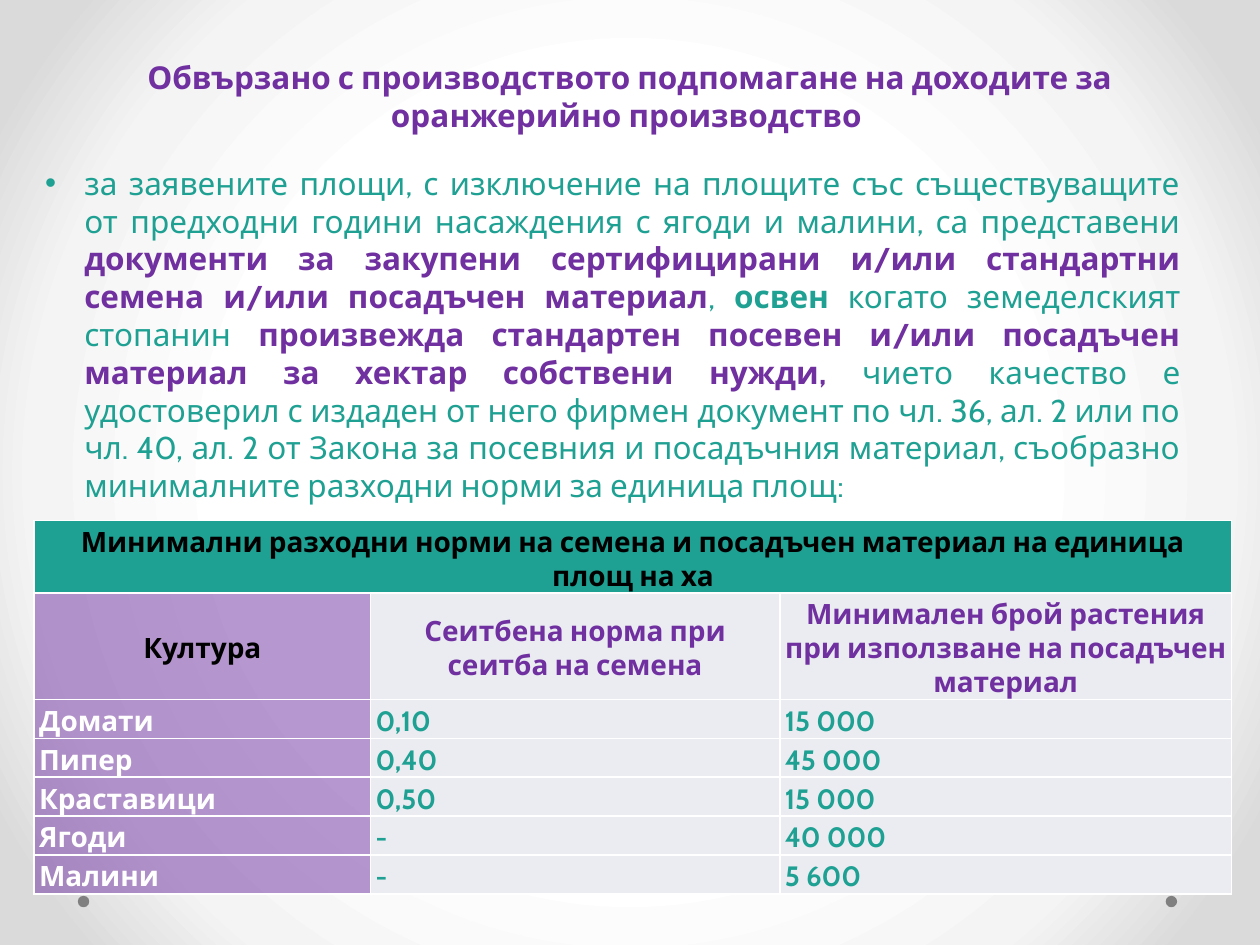
"""Builds a slide on coupled income support for greenhouse production."""
from typing import NamedTuple

from lxml.etree import SubElement
from pptx import Presentation
from pptx.dml.color import RGBColor
from pptx.enum.shapes import MSO_SHAPE as Shape
from pptx.enum.text import MSO_ANCHOR as Anchor, PP_ALIGN as Align
from pptx.oxml.ns import qn
from pptx.util import Cm, Pt

FONT = "Cabin"
TEAL, PURPLE, PALE = "1EA092", "7030A0", "EAECF2"
BLACK, WHITE, GREY = "000000", "FFFFFF", "808080"


class TextRun(NamedTuple):
    text: str
    color: str = TEAL
    bold: bool = False


class CellStyle(NamedTuple):
    fill: str
    color: str
    align: Align
    opacity: int = 100


BANNER = CellStyle(TEAL, BLACK, Align.CENTER)
CORNER = CellStyle(PURPLE, BLACK, Align.CENTER, 50)
HEADING = CellStyle(PALE, PURPLE, Align.CENTER)
CROP = CellStyle(PURPLE, WHITE, Align.JUSTIFY, 50)
VALUE = CellStyle(PALE, TEAL, Align.LEFT)

TITLE = "Обвързано с производството подпомагане на доходите за оранжерийно производство "
CONDITIONS = [
    TextRun("за заявените площи, с изключение на площите със съществуващите от предходни "
            "години насаждения с ягоди и малини, са представени "),
    TextRun("документи за закупени сертифицирани и/или стандартни семена и/или "
            "посадъчен материал", PURPLE, True),
    TextRun(", "),
    TextRun("освен", bold=True),
    TextRun(" когато земеделският стопанин "),
    TextRun("произвежда стандартен посевен и/или посадъчен материал за хектар "
            "собствени нужди, ", PURPLE, True),
    TextRun("чието качество е удостоверил с издаден от него фирмен документ по чл. 36, "
            "ал. 2 или по чл. 40, ал. 2 от Закона за посевния и посадъчния материал, "
            "съобразно минималните разходни норми за единица площ: "),
]
TABLE_TITLE = "Минимални разходни норми на семена и посадъчен материал на единица площ на ха"
HEADINGS = ("Култура", "Сеитбена норма при сеитба на семена",
            "Минимален брой растения при използване на посадъчен материал")
NORMS = [
    ("Домати", "0,10", "15 000"),
    ("Пипер", "0,40", "45 000"),
    ("Краставици", "0,50", "15 000"),
    ("Ягоди", "-", "40 000"),
    ("Малини", "-", "5 600"),
]
COLUMN_WIDTHS = (6.78, 8.25, 9.11)
ROW_HEIGHT = 0.61


def rgb(value: str) -> RGBColor:
    return RGBColor.from_string(value)


def add_run(paragraph, part: TextRun, size: int) -> None:
    run = paragraph.add_run()
    run.text = part.text
    run.font.name, run.font.size, run.font.bold = FONT, Pt(size), part.bold
    run.font.color.rgb = rgb(part.color)


def set_background(slide) -> None:
    slide.background.fill.gradient()
    gradient = slide.element.find(".//" + qn("a:gradFill"))
    for child in list(gradient):
        gradient.remove(child)
    stops = SubElement(gradient, qn("a:gsLst"))
    for position, color in ((50, WHITE), (76, "F4F4F4"), (92, "DADADA")):
        stop = SubElement(stops, qn("a:gs"), pos=str(position * 1000))
        SubElement(stop, qn("a:srgbClr"), val=color)
    circle = SubElement(gradient, qn("a:path"), path="circle")
    SubElement(circle, qn("a:fillToRect"), dict.fromkeys("ltrb", "50000"))


def add_dot(slide, left: float) -> None:
    dot = slide.shapes.add_shape(Shape.OVAL, Cm(left), Cm(18.06), Cm(0.23), Cm(0.23))
    dot.shadow.inherit = False
    dot.fill.solid()
    dot.fill.fore_color.rgb = rgb(GREY)
    dot.line.fill.background()


def format_title(slide) -> None:
    title = slide.shapes.title
    title.left, title.top, title.width, title.height = Cm(1.17), Cm(1.04), Cm(23.06), Cm(1.8)
    frame = title.text_frame
    frame.word_wrap, frame.vertical_anchor = True, Anchor.TOP
    paragraph = frame.paragraphs[0]
    paragraph.alignment = Align.CENTER
    add_run(paragraph, TextRun(TITLE, PURPLE, True), 18)


def add_conditions(slide) -> None:
    box = slide.shapes.add_textbox(Cm(0.66), Cm(3.18), Cm(23.39), Cm(7.19))
    box.text_frame.word_wrap = True
    paragraph = box.text_frame.paragraphs[0]
    paragraph.alignment = Align.JUSTIFY
    properties = paragraph._p.get_or_add_pPr()
    properties.set("marL", str(Cm(0.79)))
    properties.set("indent", str(-Cm(0.79)))
    SubElement(properties, qn("a:buFont"), typeface="Arial")
    SubElement(properties, qn("a:buChar"), char="•")
    for part in CONDITIONS:
        add_run(paragraph, part, 18)


def format_cell(cell, text: str, style: CellStyle) -> None:
    properties = cell._tc.get_or_add_tcPr()
    for side in ("lnL", "lnR", "lnT", "lnB"):
        line = SubElement(properties, qn(f"a:{side}"), w=str(Pt(1)))
        SubElement(SubElement(line, qn("a:solidFill")), qn("a:srgbClr"), val=WHITE)
    cell.fill.solid()
    cell.fill.fore_color.rgb = rgb(style.fill)
    if style.opacity < 100:
        color = properties.find(qn("a:solidFill")).find(qn("a:srgbClr"))
        SubElement(color, qn("a:alpha"), val=str(style.opacity * 1000))
    cell.vertical_anchor = Anchor.MIDDLE
    cell.margin_left = cell.margin_right = cell.margin_top = Cm(0.1)
    cell.margin_bottom = 0
    paragraph = cell.text_frame.paragraphs[0]
    paragraph.alignment = style.align
    if text:
        add_run(paragraph, TextRun(text, style.color, True), 16)


def add_norms_table(slide) -> None:
    rows = [((TABLE_TITLE, "", ""), (BANNER,) * 3),
            (HEADINGS, (CORNER, HEADING, HEADING))]
    rows += [(norm, (CROP, VALUE, VALUE)) for norm in NORMS]
    table = slide.shapes.add_table(
        len(rows), len(COLUMN_WIDTHS), Cm(0.69), Cm(10.49),
        Cm(sum(COLUMN_WIDTHS)), Cm(ROW_HEIGHT * (len(rows) + 1))).table
    table.first_row = table.horz_banding = False
    for column, width in zip(table.columns, COLUMN_WIDTHS):
        column.width = Cm(width)
    for index, (texts, styles) in enumerate(rows):
        table.rows[index].height = Cm(ROW_HEIGHT * (1 if index else 2))
        for cell, text, style in zip(table.rows[index].cells, texts, styles):
            format_cell(cell, text, style)
    table.cell(0, 0).merge(table.cell(0, len(COLUMN_WIDTHS) - 1))


def main() -> None:
    presentation = Presentation()
    presentation.slide_width, presentation.slide_height = Cm(25.4), Cm(19.05)
    slide = presentation.slides.add_slide(presentation.slide_layouts[5])
    set_background(slide)
    for left in (23.5, 1.57):
        add_dot(slide, left)
    format_title(slide)
    add_norms_table(slide)
    add_conditions(slide)
    presentation.save("out.pptx")


if __name__ == "__main__":
    main()
